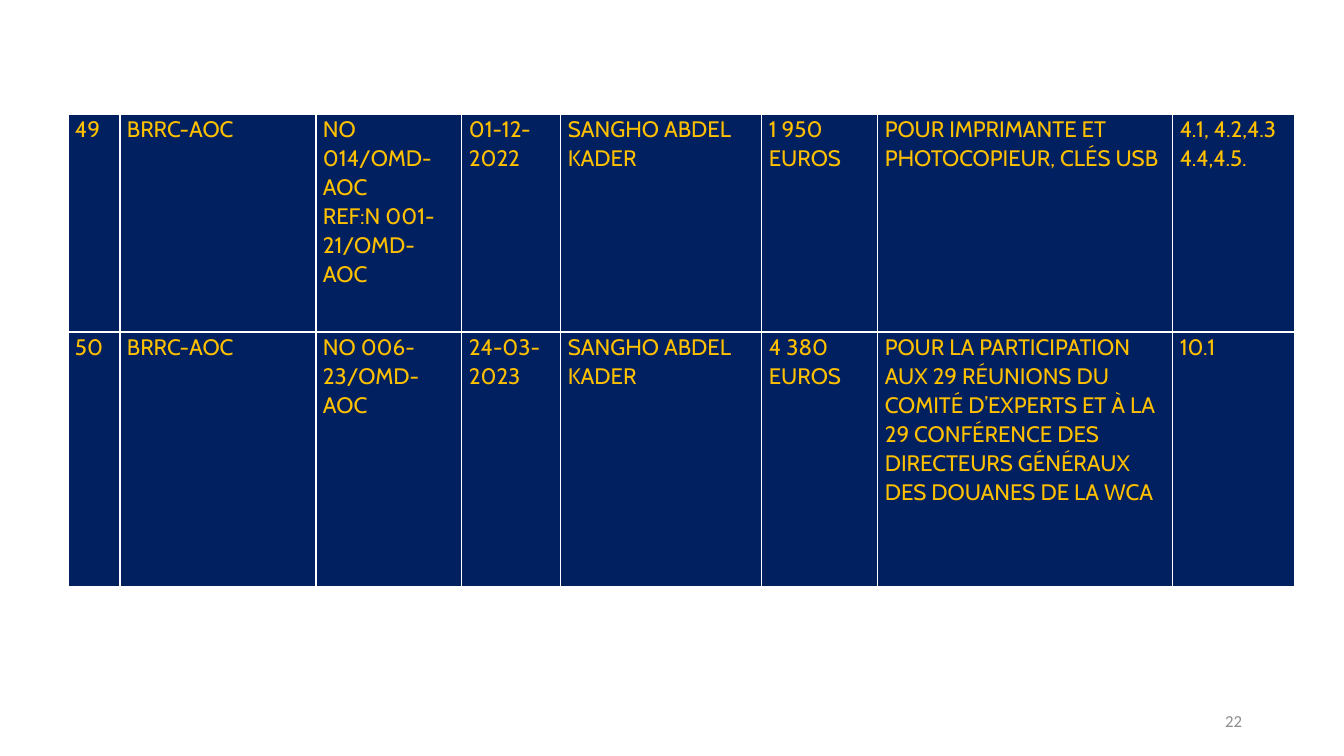
from lxml.etree import SubElement
from pptx import Presentation
from pptx.dml.color import RGBColor
from pptx.enum.text import MSO_ANCHOR, PP_ALIGN
from pptx.oxml.ns import qn
from pptx.util import Pt

ROWS = [
    ("49", "BRRC-AOC", "NO 014/OMD-AOC\nREF:N 001-21/OMD-AOC", "01-12-2022",
     "SANGHO ABDEL KADER", "1 950 EUROS",
     "POUR IMPRIMANTE ET PHOTOCOPIEUR, CLÉS USB", "4.1, 4.2,4.3\n4.4,4.5."),
    ("50", "BRRC-AOC", "NO 006-23/OMD-AOC", "24-03-2023",
     "SANGHO ABDEL KADER", "4 380 EUROS",
     "POUR LA PARTICIPATION AUX 29 RÉUNIONS DU COMITÉ D’EXPERTS ET À LA "
     "29 CONFÉRENCE DES DIRECTEURS GÉNÉRAUX DES DOUANES DE LA WCA", "10.1"),
]
COLUMN_WIDTHS = (52, 196, 146, 99, 201, 116, 295, 122)
ROW_HEIGHTS = (218, 255)
TABLE_LEFT, TABLE_TOP = 68, 114
PAGE_NUMBER = "22"
NAVY, GOLD, WHITE, GREY = "002060", "FFC000", "FFFFFF", "8C8C8C"


def px(length):
    return round(length * 914400 / 100.8)


def color(value):
    return RGBColor.from_string(value)


def set_font(paragraph, name, size, value):
    font = paragraph.font
    font.name, font.size, font.color.rgb = name, Pt(size), color(value)


def add_borders(cell, value, width):
    """Draw all four sides; border elements must come before the fill."""
    properties = cell._tc.get_or_add_tcPr()
    for index, side in enumerate(("lnL", "lnR", "lnT", "lnB")):
        line = SubElement(properties, qn(f"a:{side}"), w=str(Pt(width)))
        fill = SubElement(line, qn("a:solidFill"))
        SubElement(fill, qn("a:srgbClr"), val=value)
        properties.insert(index, line)


def fill_cell(cell, text):
    cell.margin_left = cell.margin_right = px(7)
    cell.margin_top = cell.margin_bottom = 0
    cell.fill.solid()
    cell.fill.fore_color.rgb = color(NAVY)
    add_borders(cell, WHITE, 1)
    cell.text = text
    for paragraph in cell.text_frame.paragraphs:
        paragraph.line_spacing = 1.07
        set_font(paragraph, "Cabin", 16, GOLD)


def add_expense_table(slide):
    table = slide.shapes.add_table(
        len(ROWS), len(COLUMN_WIDTHS), px(TABLE_LEFT), px(TABLE_TOP),
        px(sum(COLUMN_WIDTHS)), px(sum(ROW_HEIGHTS))).table
    table.first_row = table.horz_banding = False
    for column, width in zip(table.columns, COLUMN_WIDTHS):
        column.width = px(width)
    for row, height, texts in zip(table.rows, ROW_HEIGHTS, ROWS):
        row.height = px(height)
        for cell, text in zip(row.cells, texts):
            fill_cell(cell, text)


def add_page_number(slide):
    frame = slide.shapes.add_textbox(px(950), px(701), px(302), px(40)).text_frame
    frame.word_wrap = True
    frame.vertical_anchor = MSO_ANCHOR.MIDDLE
    paragraph = frame.paragraphs[0]
    paragraph.text = PAGE_NUMBER
    paragraph.alignment = PP_ALIGN.RIGHT
    set_font(paragraph, "Calibri", 12, GREY)


def main():
    presentation = Presentation()
    presentation.slide_width, presentation.slide_height = px(1344), px(756)
    slide = presentation.slides.add_slide(presentation.slide_layouts[6])
    add_expense_table(slide)
    add_page_number(slide)
    presentation.save("out.pptx")


if __name__ == "__main__":
    main()
